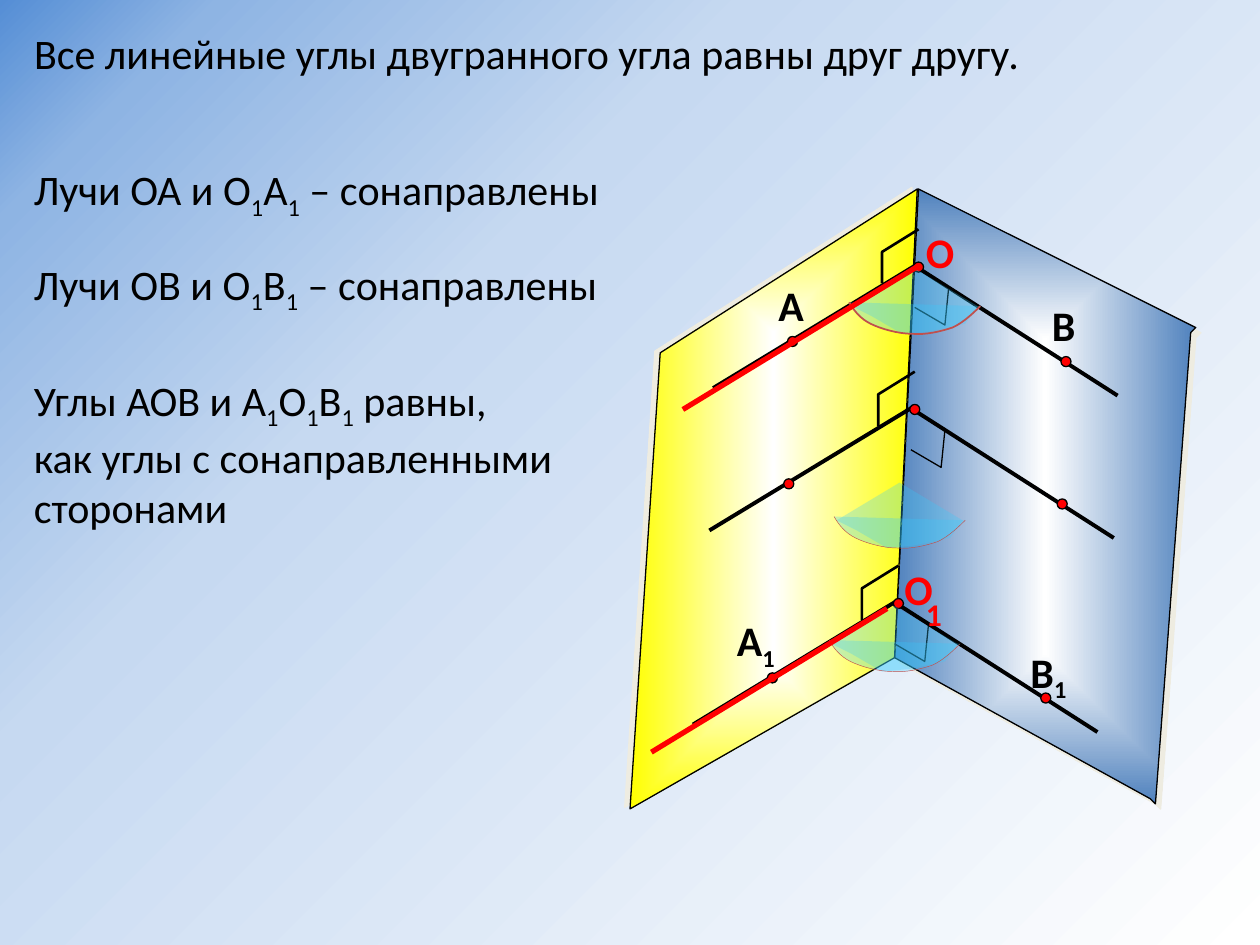
from lxml import etree
from pptx import Presentation, util as u
from pptx.dml.color import RGBColor
from pptx.enum import dml, shapes, text
from pptx.oxml.ns import qn

HUES = dict(ink="000000", red="FF0000", fan="33CCFF", rim="C0504D",
            glow="EEECE1", white="FFFFFF", blue="4F81BD", yellow="FFFF00")
SKY = [(0, "558ED5"), (10, "8EB4E3"), (34, "C6D9F1"), (100, "FFFFFF")]

TITLE = ("Все линейные углы двугранного угла равны друг другу.", 0.17, 0.17, 9.67, 0.5)
NOTES = [
    (["Лучи ОА и О|1|А|1| – сонаправлены"], 1.25, 5.58, 0.5),
    (["Лучи ОВ и О|1|В|1| – сонаправлены"], 2, 5.58, 0.5),
    (["Углы АОВ и А|1|О|1|В|1| равны,",
      "как углы с сонаправленными сторонами"], 2.92, 5, 1.3),
]
FACES = [
    ([(9.13, 6.34), (7.1, 5.22), (7.29, 1.5), (9.49, 2.6), (9.45, 2.64), (9.17, 6.38)],
     "blue", 4.2, 45),
    ([(5, 6.42), (7.1, 5.22), (7.28, 1.5), (5.24, 2.8)], "yellow", 3.2, 198),
]
ANGLES = [
    ((7.23, 3.24), []),
    ((7.26, 2.11), [("А", 6.08, 2.17, 0.5, "ink"), ("В", 8.25, 2.33, 0.5, "ink"),
                    ("O", 7.25, 1.75, 0.5, "red")]),
    ((7.1, 4.78), [("А|1|", 5.75, 4.83, 0.75, "ink"), ("В|1|", 8.08, 5.08, 0.75, "ink"),
                   ("O", 7.08, 4.42, 0.5, "red")]),
]
RAYS = [(-1.6, 0.97), (1.61, 1.03)]
MARKS = [([(0.03, -0.29), (-0.26, -0.11), (-0.26, 0.14)], 1.5),
         ([(0, 0.33), (0.24, 0.47), (0.27, 0.17)], 0.75)]
DOTS = [(-0.97, 0.6), (1.2, 0.76), (0.03, 0.01)]
DOT = 0.08
FANS = [((7.1, 4.81), 0.25), ((7.14, 3.83), 0.25), ((7.26, 2.13), 1)]
WEDGE = [(0.5, 0.3), (0, 0), (-0.5, 0.3), (-0.34, 0.38), (-0.1, 0.52), (0.11, 0.5), (0.4, 0.44)]
ARC = [(-0.52, 0.27), (-0.48, 0.34), (-0.43, 0.4), (-0.35, 0.44), (-0.27, 0.48),
       (-0.13, 0.52), (-0.02, 0.52), (0.09, 0.53), (0.21, 0.5), (0.3, 0.47),
       (0.39, 0.43), (0.48, 0.34), (0.52, 0.3)]
BOLD_RAYS = [((7.29, 2.11), (5.42, 3.25)), ((7.04, 4.83), (5.17, 5.97))]


def rgb(name):
    return RGBColor.from_string(HUES[name])


def node(parent, tag, **attrs):
    return etree.SubElement(parent, qn(tag), {k: str(v) for k, v in attrs.items()})


def shift(pts, base):
    return [(base[0] + x, base[1] + y) for x, y in pts]


def shade(fill, root, stops, kind, rect):
    fill.gradient()
    grad = root.find(".//" + qn("a:gradFill"))
    for kid in list(grad):
        grad.remove(kid)
    stack = node(grad, "a:gsLst")
    for pos, hue in stops:
        node(node(stack, "a:gs", pos=pos * 1000), "a:srgbClr", val=hue)
    ring = node(grad, "a:path", path=kind)
    node(ring, "a:fillToRect", **{k: v * 1000 for k, v in zip("ltrb", rect)})


def outline(shape, hue, width):
    shape.line.color.rgb = rgb(hue)
    shape.line.width = u.Pt(width)


def trace(pool, pts, hue=None, width=0, close=False):
    first, *rest = [(u.Inches(x), u.Inches(y)) for x, y in pts]
    pen = pool.build_freeform(*first, scale=1.0)
    pen.add_line_segments(rest, close=close)
    shape = pen.convert_to_shape()
    shape.shadow.inherit = False
    shape.fill.background()
    if hue:
        outline(shape, hue, width)
    else:
        shape.line.fill.background()
    return shape


def curve(shape):
    legs = shape.element.findall(".//" + qn("a:lnTo"))
    track = legs[0].getparent()
    for i in range(0, len(legs), 3):
        bend = node(track, "a:cubicBezTo")
        for leg in legs[i:i + 3]:
            bend.append(leg[0])
            track.remove(leg)


def tint(shape):
    shape.fill.solid()
    shape.fill.fore_color.rgb = rgb("fan")
    color = shape.element.spPr.find(qn("a:solidFill"))[0]
    node(color, "a:alpha", val=28000)


def link(pool, start, end, hue, width):
    ends = [u.Inches(v) for v in (*start, *end)]
    line = pool.add_connector(shapes.MSO_CONNECTOR.STRAIGHT, *ends)
    outline(line, hue, width)
    node(line.element.spPr, "a:effectLst")


def write(shape, lines, hue="ink", size=24, bold=False, wrap=True):
    frame = shape.text_frame
    frame.word_wrap = wrap
    frame.auto_size = text.MSO_AUTO_SIZE.SHAPE_TO_FIT_TEXT
    frame.vertical_anchor = text.MSO_ANCHOR.TOP
    for i, line in enumerate(lines):
        para = frame.add_paragraph() if i else frame.paragraphs[0]
        para.alignment = text.PP_ALIGN.LEFT
        for j, part in enumerate(line.split("|")):
            if not part:
                continue
            run = para.add_run()
            run.text = part
            run.font.name, run.font.size = "Calibri", u.Pt(size)
            run.font.bold, run.font.color.rgb = bold, rgb(hue)
            if j % 2:
                run.font._element.set("baseline", "-25000")


def label(pool, lines, x, y, w, h, **style):
    write(pool.add_textbox(*map(u.Inches, (x, y, w, h))), lines, **style)


def face(pool, pts, hue, dist, turn):
    shape = trace(pool, pts, "ink", 0.75, True)
    stops = [(0, HUES["white"]), (100, HUES[hue])]
    shade(shape.fill, shape.element.spPr, stops, "rect", [50] * 4)
    glow = node(shape.element.spPr.find(qn("a:effectLst")), "a:outerShdw",
                dist=int(u.Pt(dist)), dir=turn * 60000, algn="ctr", rotWithShape=0)
    node(glow, "a:srgbClr", val=HUES["glow"])


def angle(pool, base, names):
    for end in shift(RAYS, base):
        link(pool, base, end, "ink", 2.25)
    for pts, width in MARKS:
        trace(pool, shift(pts, base), "ink", width)
    for name, x, y, w, hue in names:
        label(pool, [name], x, y, w, 0.5, hue=hue, bold=True)
    for x, y in shift(DOTS, base):
        box = map(u.Inches, (x - DOT / 2, y - DOT / 2, DOT, DOT))
        dot = pool.add_shape(shapes.MSO_SHAPE.OVAL, *box)
        dot.shadow.inherit = False
        dot.fill.solid()
        dot.fill.fore_color.rgb = rgb("red")
        outline(dot, "ink", 0.75)


def main():
    deck = Presentation()
    deck.slide_width, deck.slide_height = u.Inches(10), u.Inches(7.5)
    slide = deck.slides.add_slide(deck.slide_layouts[5])
    shade(slide.background.fill, slide.element, SKY, "circle", [0, 0, 100, 100])
    pool = slide.shapes

    words, *box = TITLE
    title = pool.title
    title.left, title.top, title.width, title.height = map(u.Inches, box)
    write(title, [words])

    for item in FACES:
        face(pool, *item)
    for base, names in ANGLES:
        angle(pool.add_group_shape().shapes, base, names)

    fans = pool.add_group_shape().shapes
    for base, width in FANS:
        tint(trace(fans, shift(WEDGE, base), close=True))
        arc = trace(fans, shift(ARC, base), "rim", width)
        curve(arc)
        tint(arc)

    bold = pool.add_group_shape().shapes
    for start, end in BOLD_RAYS:
        link(bold, start, end, "red", 3)

    label(pool, ["1"], 7.25, 4.67, 0.34, 0.4, hue="red", size=18, bold=True, wrap=False)
    for lines, y, w, h in NOTES:
        label(pool, lines, 0.17, y, w, h)
    deck.save("out.pptx")


if __name__ == "__main__":
    main()
